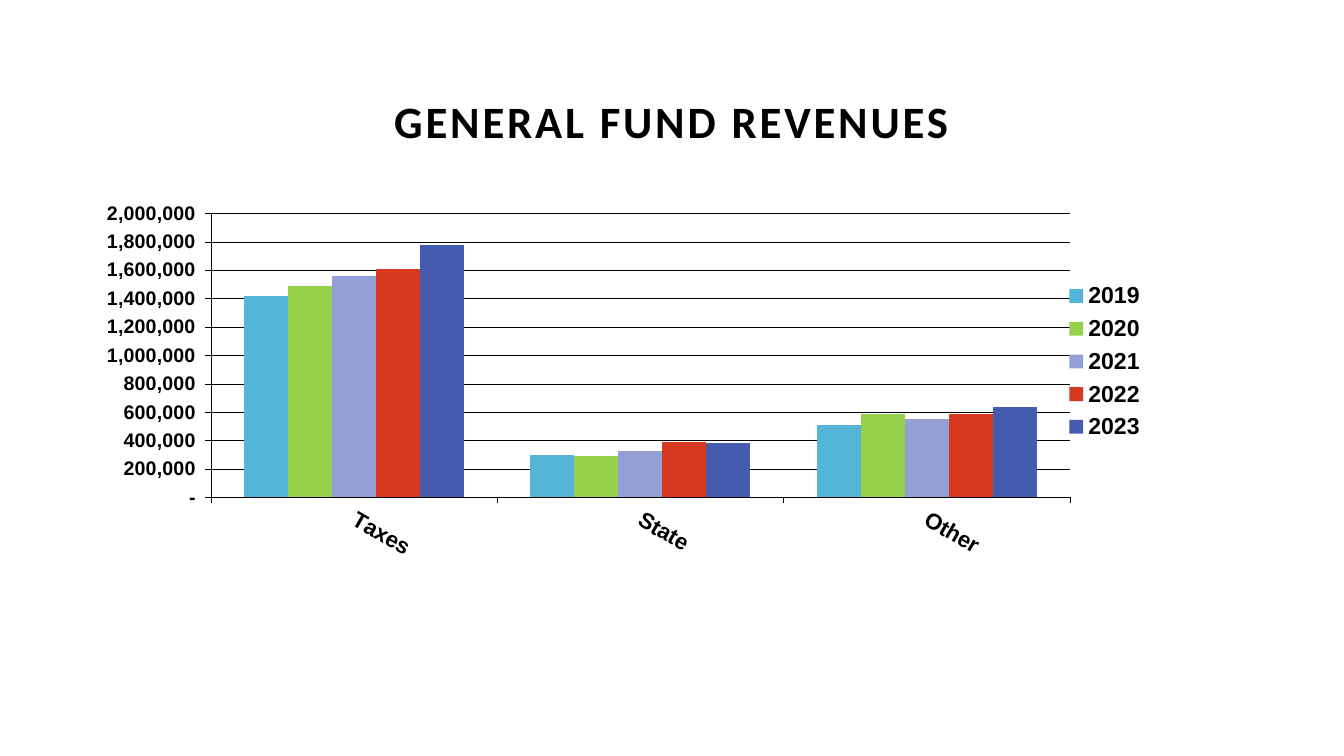
from lxml import etree
from pptx import Presentation
from pptx import util as u
from pptx.chart.data import CategoryChartData
from pptx.dml.color import RGBColor
from pptx.enum import chart as ch, text
from pptx.oxml.ns import qn

BLACK = RGBColor(0x00, 0x00, 0x00)
SKY = RGBColor(0x53, 0xB5, 0xD8)
GREEN = RGBColor(0x95, 0xD1, 0x4A)
LAVENDER = RGBColor(0x93, 0x9F, 0xD6)
RED = RGBColor(0xD7, 0x39, 0x20)
BLUE = RGBColor(0x45, 0x5B, 0xB0)


def px(n):
    return u.Emu(round(n * 914400 / 100.8))


def place(parent, index, x, y, w, h, inner=False):
    """Give a chart part a manual layout, in fractions of the chart."""
    for old in parent.findall(qn("c:layout")):
        parent.remove(old)
    layout = etree.Element(qn("c:layout"))
    manual = etree.SubElement(layout, qn("c:manualLayout"))
    settings = [("layoutTarget", "inner")] if inner else []
    settings += [("xMode", "edge"), ("yMode", "edge"), ("x", x), ("y", y), ("w", w), ("h", h)]
    for tag, value in settings:
        etree.SubElement(manual, qn("c:" + tag)).set("val", str(value))
    parent.insert(index, layout)


prs = Presentation()
prs.slide_width, prs.slide_height = px(1344), px(756)
slide = prs.slides.add_slide(prs.slide_layouts[6])

# Title
title = slide.shapes.add_textbox(px(25), px(63), px(1293), px(116)).text_frame
title.word_wrap = True
title.vertical_anchor = text.MSO_ANCHOR.MIDDLE
heading = title.paragraphs[0]
heading.alignment = text.PP_ALIGN.CENTER
run = heading.add_run()
run.text = "GENERAL FUND REVENUES"
run.font.name, run.font.size, run.font.bold = "Calibri", u.Pt(32), True
run.font.color.rgb = BLACK
run.font._element.set("spc", "200")

# Revenue by source and year
revenues = [
    ("2019", SKY, (1420000, 300000, 510000)),
    ("2020", GREEN, (1490000, 290000, 590000)),
    ("2021", LAVENDER, (1560000, 330000, 550000)),
    ("2022", RED, (1610000, 390000, 590000)),
    ("2023", BLUE, (1780000, 380000, 640000)),
]
data = CategoryChartData(number_format="#,##0")
data.categories = ["Taxes", "State", "Other"]
for year, _, amounts in revenues:
    data.add_series(year, amounts)
chart = slide.shapes.add_chart(
    ch.XL_CHART_TYPE.COLUMN_CLUSTERED, px(25), px(189), px(1293), px(486), data).chart
chart.has_title = False
plot = chart.plots[0]
plot.gap_width, plot.overlap, plot.vary_by_categories = 150, 0, False
for series, (_, color, _) in zip(plot.series, revenues):
    series.format.fill.solid()
    series.format.fill.fore_color.rgb = color
place(chart._chartSpace.chart.plotArea, 0, 0.144, 0.05, 0.664, 0.585, inner=True)

# Axes
sources, amounts = chart.category_axis, chart.value_axis
sources.tick_label_position = ch.XL_TICK_LABEL_POSITION.LOW
amounts.minimum_scale, amounts.maximum_scale, amounts.major_unit = 0, 2000000, 200000
amounts.has_major_gridlines = True
amounts.tick_labels.number_format = r'_(* #,##0_);_(* \(#,##0\);_(* "-"_);_(@_)'
amounts.tick_labels.number_format_is_linked = False
for axis in (sources, amounts):
    axis.major_tick_mark = ch.XL_TICK_MARK.OUTSIDE
    axis.minor_tick_mark = ch.XL_TICK_MARK.NONE
for line in (sources.format.line, amounts.format.line, amounts.major_gridlines.format.line):
    line.color.rgb = BLACK
    line.width = u.Pt(0.25)

# Legend
chart.has_legend = True
legend = chart.legend
legend.position = ch.XL_LEGEND_POSITION.RIGHT
legend.include_in_layout = False
place(legend._element, 1, 0.8, 0.18, 0.07, 0.35)

# Chart text
for font, size in ((chart.font, 18), (sources.tick_labels.font, 16),
                   (amounts.tick_labels.font, 14), (legend.font, 16.5)):
    font.name, font.size, font.bold = "Arial", u.Pt(size), True
    font.color.rgb = BLACK
sources._element.find(qn("c:txPr")).find(qn("a:bodyPr")).set("rot", "1800000")

prs.save("out.pptx")
